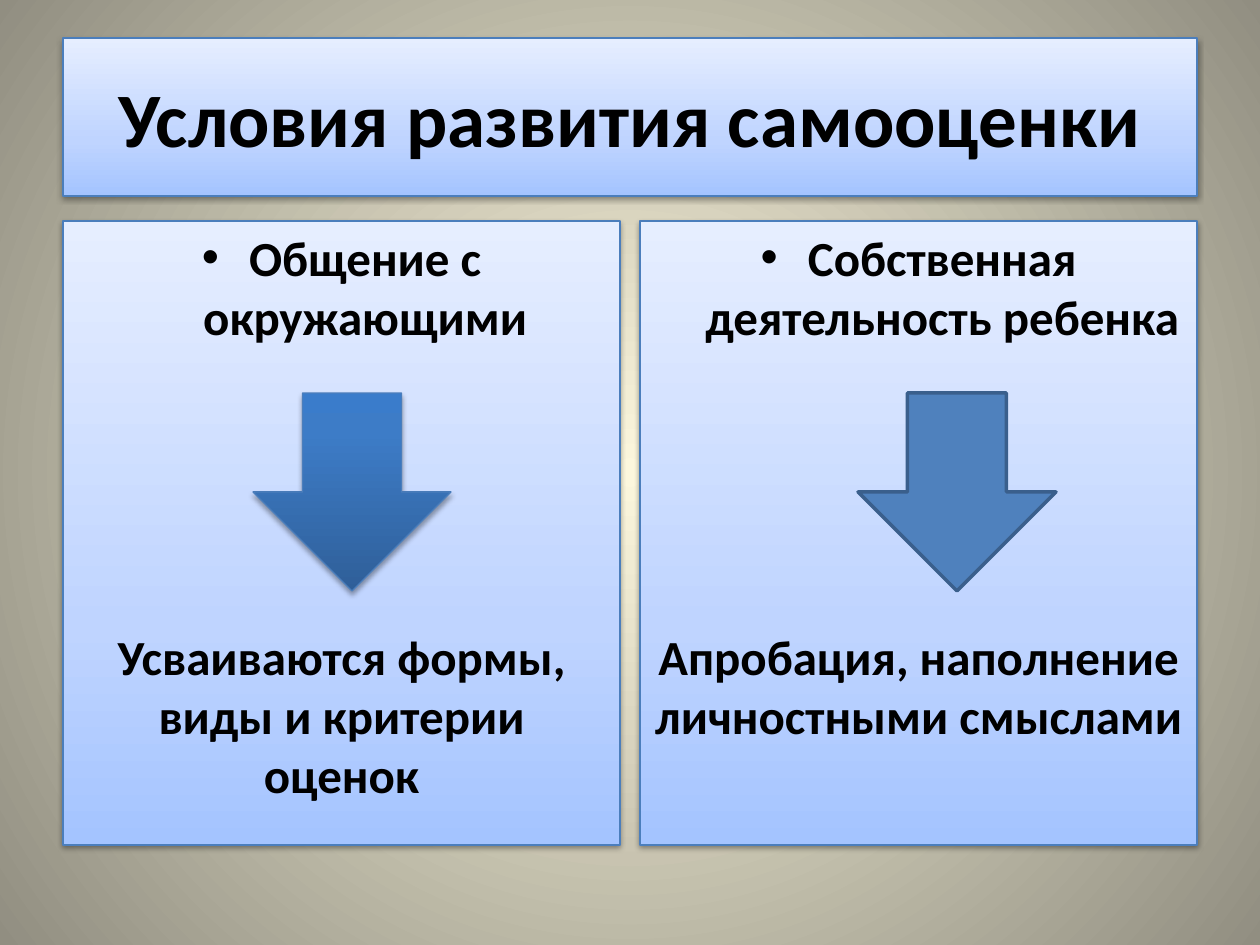
import pptx
import pptx.dml.color
import pptx.enum.shapes
import pptx.enum.text
import pptx.oxml.ns
import pptx.util
from lxml import etree

SCALE = 914400 / 126
PANEL = [(0, "A4C4FF"), (35, "BFD4FF"), (100, "E6EEFF")]
ARROW = [(0, "2F5F99"), (80, "3D7CC7"), (100, "3A7CCB")]
GLOW = [(0, "FCF7DD"), (100, "918E81")]
EDGE = "4B7EBC"


def px(n):
    return pptx.util.Emu(round(n * SCALE))


def color(hexa):
    return pptx.dml.color.RGBColor.from_string(hexa)


def add(node, tag, **attrs):
    """Append a DrawingML child with the given attributes."""
    child = etree.SubElement(node, pptx.oxml.ns.qn("a:" + tag))
    for key, value in attrs.items():
        child.set(key, str(value))
    return child


def blend(fill, root, stops, round_=False):
    """Fill with a gradient, rising from the bottom or round the centre."""
    fill.gradient()
    grad = root.xpath(".//a:gradFill")[0]
    for child in list(grad):
        grad.remove(child)
    group = add(grad, "gsLst")
    for pos, hexa in stops:
        add(add(group, "gs", pos=pos * 1000), "srgbClr", val=hexa)
    if round_:
        way = add(grad, "path", path="circle")
        add(way, "fillToRect", l=50000, t=50000, r=50000, b=50000)
    else:
        add(grad, "lin", ang=270 * 60000, scaled=0)


def border(shape, hexa, width):
    shape.line.color.rgb = color(hexa)
    shape.line.width = pptx.util.Pt(width)


def shade(shape, alpha, dist):
    shape.shadow.inherit = False
    group = shape._element.xpath("./p:spPr/a:effectLst")[0]
    cast = add(group, "outerShdw", blurRad=pptx.util.Pt(3.1),
               dist=pptx.util.Pt(dist), dir=90 * 60000, rotWithShape=0)
    add(add(cast, "srgbClr", val="000000"), "alpha", val=alpha * 1000)


def place(shape, box):
    shape.left, shape.top, shape.width, shape.height = map(px, box)


def panel(shape, box):
    """Move a placeholder to its box and give it the blue card look."""
    place(shape, box)
    blend(shape.fill, shape._element, PANEL)
    border(shape, EDGE, 0.75)
    shade(shape, 38, 1.6)
    shape.text_frame.auto_size = pptx.enum.text.MSO_AUTO_SIZE.NONE


def write(para, text, size):
    para.alignment = pptx.enum.text.PP_ALIGN.CENTER
    run = para.add_run()
    run.text = text
    run.font.name = "Calibri"
    run.font.size = pptx.util.Pt(size)
    run.font.bold = True
    run.font.color.rgb = color("000000")


def header(shape, box, text):
    panel(shape, box)
    write(shape.text_frame.paragraphs[0], text, 44)


def column(shape, box, cause, result):
    """Fill one card: a bulleted cause on top, its result below the arrow."""
    panel(shape, box)
    frame = shape.text_frame
    write(frame.paragraphs[0], cause, 28)
    last = frame.add_paragraph()
    write(last, result, 28)
    last.space_before = pptx.util.Pt(161)
    props = last._p.get_or_add_pPr()
    props.set("marL", "0")
    props.set("indent", "0")
    add(props, "buNone")


def arrow(slide, box, dx):
    """Add a down arrow, dx px from the left of the card box."""
    kind = pptx.enum.shapes.MSO_SHAPE.DOWN_ARROW
    spot = (box[0] + dx, box[1] + 172, 198, 198)
    return slide.shapes.add_shape(kind, *map(px, spot))


def main():
    deck = pptx.Presentation()
    deck.slide_width, deck.slide_height = px(1260), px(945)
    slide = deck.slides.add_slide(deck.slide_layouts[3])
    blend(slide.background.fill, slide._element, GLOW, True)

    title, first, second = slide.placeholders
    left, right = [(63 + i * 577, 221, 557, 624) for i in range(2)]
    header(title, (63, 38, 1134, 158), "Условия развития самооценки")
    column(first, left, "Общение с окружающими",
           "Усваиваются формы, виды и критерии оценок")
    column(second, right, "Собственная деятельность ребенка",
           "Апробация, наполнение личностными смыслами")

    deep = arrow(slide, left, 190)
    blend(deep.fill, deep._element, ARROW)
    border(deep, EDGE, 0.75)
    shade(deep, 35, 1.8)

    flat = arrow(slide, right, 218)
    flat.fill.solid()
    flat.fill.fore_color.rgb = color("4F81BD")
    border(flat, "3A5F8C", 2)
    flat.shadow.inherit = False

    deck.save("out.pptx")


if __name__ == "__main__":
    main()
